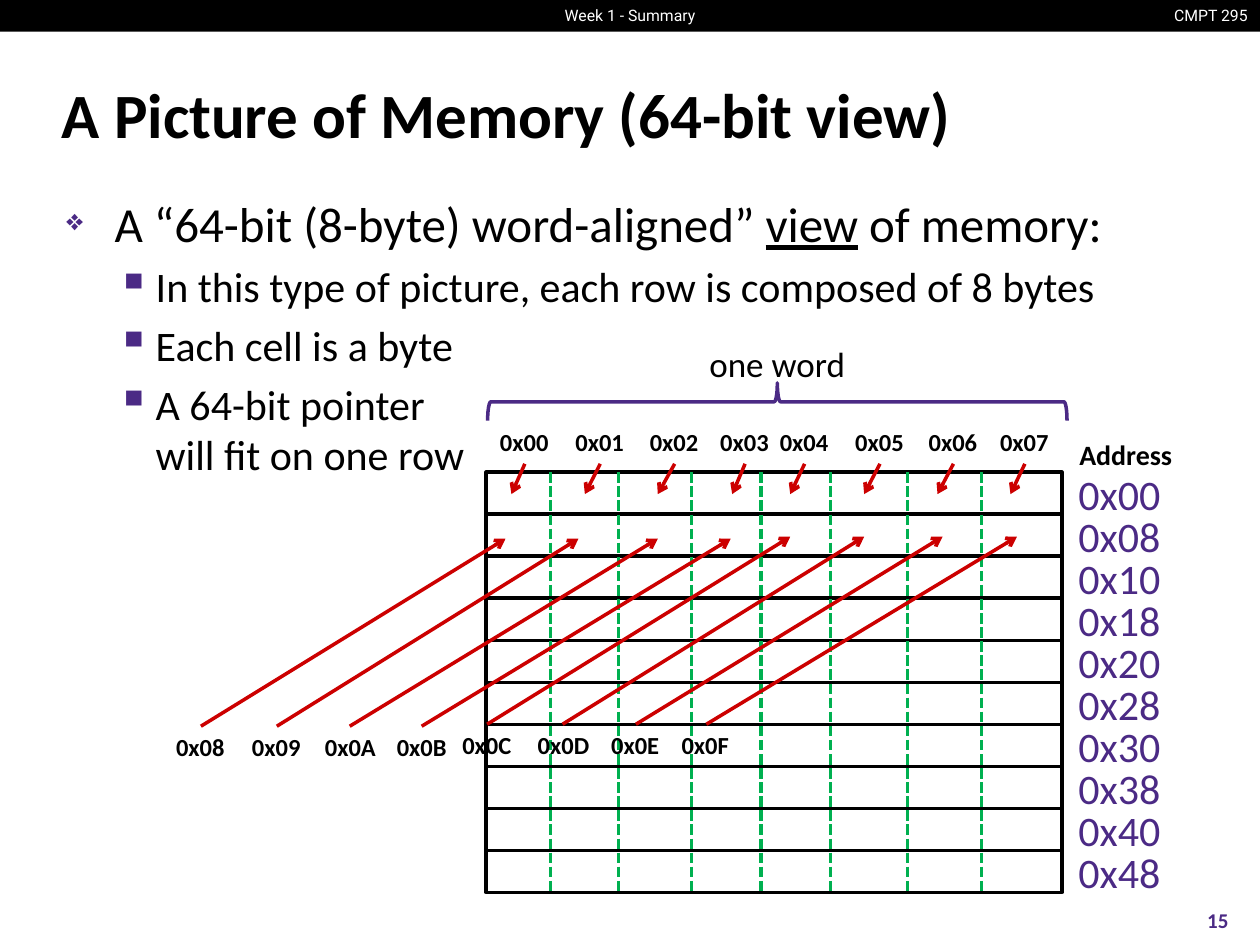
import pptx
import pptx.dml.color
import pptx.enum.dml
import pptx.enum.shapes
import pptx.enum.text
import pptx.oxml.ns
import pptx.util
from lxml import etree

Cm, Pt = pptx.util.Cm, pptx.util.Pt
ALIGN = pptx.enum.text.PP_ALIGN
FIT = pptx.enum.text.MSO_AUTO_SIZE
MIDDLE = pptx.enum.text.MSO_ANCHOR.MIDDLE
SHAPE = pptx.enum.shapes.MSO_SHAPE
BLACK, WHITE, PURPLE, GREEN, RED = "000000", "FFFFFF", "4B2A85", "00B050", "CC0000"

# Memory grid, in cm
LEFT, TOP, WIDTH, ROWS = 9.8, 9.52, 11.61, 10
STEP = 8.47 / ROWS
SPLITS = [11.1, 12.47, 13.94, 15.34, 16.74, 18.29, 19.79]

# Byte labels and the arrow tips in the cells they name
UPPER = [9.83, 11.35, 12.85, 14.27, 15.47, 16.99, 18.47, 19.91]
LOWER = [3.3, 4.83, 6.3, 7.75, 9.07, 10.59, 12.07, 13.49]
TIPS_UP = [10.31, 11.79, 13.26, 14.76, 15.93, 17.42, 18.9, 20.37]
TIPS_LOW = [10.19, 11.66, 13.26, 14.73, 15.93, 17.42, 19, 20.5]

POINTS = [
    (0, ["A “64-bit (8-byte) word-aligned” ", "view", " of memory:"]),
    (1, ["In this type of picture, each row is composed of 8 bytes"]),
    (1, ["Each cell is a byte"]),
    (1, ["A 64-bit pointer \vwill fit on one row"]),
]
# Per level: size, left margin, hanging indent, bullet, bullet percent
LEVELS = [(28, 0.97, -0.97, "❖", 60), (24, 1.8, -0.79, "▪", 110)]


def color(code):
    return pptx.dml.color.RGBColor.from_string(code)


def add_tag(parent, tag, **attrs):
    return etree.SubElement(parent, pptx.oxml.ns.qn(tag), attrs)


def set_font(para, size, code=BLACK, bold=False, name="Calibri"):
    font = para.font
    font.name, font.size, font.bold = name, Pt(size), bold
    font.color.rgb = color(code)


def add_label(slide, text, box, size, code=BLACK, bold=False,
              align=ALIGN.LEFT, name="Calibri"):
    frame = slide.shapes.add_textbox(*map(Cm, box)).text_frame
    frame.word_wrap = False
    frame.auto_size = FIT.SHAPE_TO_FIT_TEXT
    para = frame.paragraphs[0]
    para.text, para.alignment = text, align
    set_font(para, size, code, bold, name)
    return frame


def add_shape(slide, kind, box, fill=None, line=None):
    shape = slide.shapes.add_shape(kind, *map(Cm, box))
    shape.shadow.inherit = False
    if fill:
        shape.fill.solid()
        shape.fill.fore_color.rgb = color(fill)
    else:
        shape.fill.background()
    if line:
        shape.line.color.rgb = color(line)
        shape.line.width = Pt(2)
    else:
        shape.line.fill.background()
    return shape


def add_line(slide, ends, code):
    straight = pptx.enum.shapes.MSO_CONNECTOR.STRAIGHT
    line = slide.shapes.add_connector(straight, *map(Cm, ends))
    line.line.color.rgb = color(code)
    line.line.width = Pt(2)
    add_tag(line._element.spPr, "a:effectLst")
    return line.line


def add_arrow(slide, ends):
    line = add_line(slide, ends, RED)
    add_tag(line._get_or_add_ln(), "a:tailEnd", type="arrow")


def add_head(slide):
    add_shape(slide, SHAPE.RECTANGLE, (0, 0, 25.4, 0.64), BLACK)
    add_label(slide, "CMPT 295", (23.34, 0, 2.06, 0.64), 9, WHITE,
              align=ALIGN.RIGHT, name="Roboto")
    add_label(slide, "Week 1 - Summary", (10.91, 0, 3.58, 0.64), 9, WHITE,
              align=ALIGN.CENTER, name="Roboto")


def set_title(slide, text):
    title = slide.shapes.title
    title.left, title.top = Cm(0.99), Cm(1.22)
    title.width, title.height = Cm(23.34), Cm(2.11)
    frame = title.text_frame
    frame.auto_size = FIT.NONE
    frame.vertical_anchor = MIDDLE
    para = frame.paragraphs[0]
    para.text, para.alignment = text, ALIGN.LEFT
    set_font(para, 36, bold=True)


def add_points(slide):
    box = slide.shapes.add_textbox(Cm(1.09), Cm(3.78), Cm(23.24), Cm(13.82))
    frame = box.text_frame
    frame.word_wrap = True
    for index, (level, parts) in enumerate(POINTS):
        para = frame.add_paragraph() if index else frame.paragraphs[0]
        size, margin, indent, mark, scale = LEVELS[level]
        para.level = level
        para.space_before = Pt(size * 0.2)
        set_font(para, size)
        if len(parts) == 1:
            para.text = parts[0]
        else:
            for part in parts:
                run = para.add_run()
                run.text = part
                run.font.underline = part == "view"
        # Bullet
        props = para._p.get_or_add_pPr()
        props.set("marL", str(Cm(margin)))
        props.set("indent", str(Cm(indent)))
        tint = etree.Element(pptx.oxml.ns.qn("a:buClr"))
        add_tag(tint, "a:srgbClr", val=PURPLE)
        # Bullet tags stand before the default run properties
        props.find(pptx.oxml.ns.qn("a:defRPr")).addprevious(tint)
        for tag, key, value in (("a:buChar", "char", mark),
                                ("a:buSzPct", "val", str(scale * 1000))):
            tint.addnext(etree.Element(pptx.oxml.ns.qn(tag), {key: value}))


def add_grid(slide):
    for row in range(ROWS):
        add_shape(slide, SHAPE.RECTANGLE, (LEFT, TOP + row * STEP, WIDTH, STEP),
                  WHITE, BLACK)
        add_label(slide, f"0x{row * 8:02X}", (21.49, 9.31 + row * STEP, 2.18, 1.27),
                  24, PURPLE)
    add_label(slide, "Address", (21.49, 8.69, 2.41, 0.94), 16, bold=True,
              align=ALIGN.CENTER)
    for x in SPLITS:
        line = add_line(slide, (x, TOP, x, TOP + ROWS * STEP), GREEN)
        line.dash_style = pptx.enum.dml.MSO_LINE.SQUARE_DOT


def add_word(slide):
    brace = add_shape(slide, SHAPE.LEFT_BRACE, (15.29, 2.26, 0.76, 11.68),
                      line=PURPLE)
    brace.rotation = 90
    add_label(slide, "one word", (14.05, 6.78, 3.28, 1.12), 20)


def add_bytes(slide):
    # First row, labelled from above
    for byte, (x, tip) in enumerate(zip(UPPER, TIPS_UP)):
        add_label(slide, f"0x{byte:02X}", (x, 8.48, 1.5, 0.86), 14, bold=True)
        add_arrow(slide, (x + 0.75, 9.35, tip, 9.96))
    # Second row, labelled from below; its right half sits a little higher
    for byte, (x, tip) in enumerate(zip(LOWER, TIPS_LOW), 8):
        lift = 0.04 if byte >= 12 else 0
        add_label(slide, f"0x{byte:02X}", (x, 14.64 - lift, 1.7, 0.86), 14, bold=True)
        add_arrow(slide, (x + 0.75, 14.64 - lift, tip, 10.86 - lift))


def main():
    deck = pptx.Presentation()
    deck.slide_width, deck.slide_height = Cm(25.4), Cm(19.05)
    slide = deck.slides.add_slide(deck.slide_layouts[5])
    add_head(slide)
    set_title(slide, "A Picture of Memory (64-bit view)")
    add_points(slide)
    # Page number
    page = add_label(slide, "15", (23.7, 18.03, 1.7, 1.02), 12, PURPLE, True,
                     ALIGN.CENTER)
    page.auto_size = FIT.NONE
    page.vertical_anchor = MIDDLE
    add_grid(slide)
    add_word(slide)
    add_bytes(slide)
    deck.save("out.pptx")


if __name__ == "__main__":
    main()
